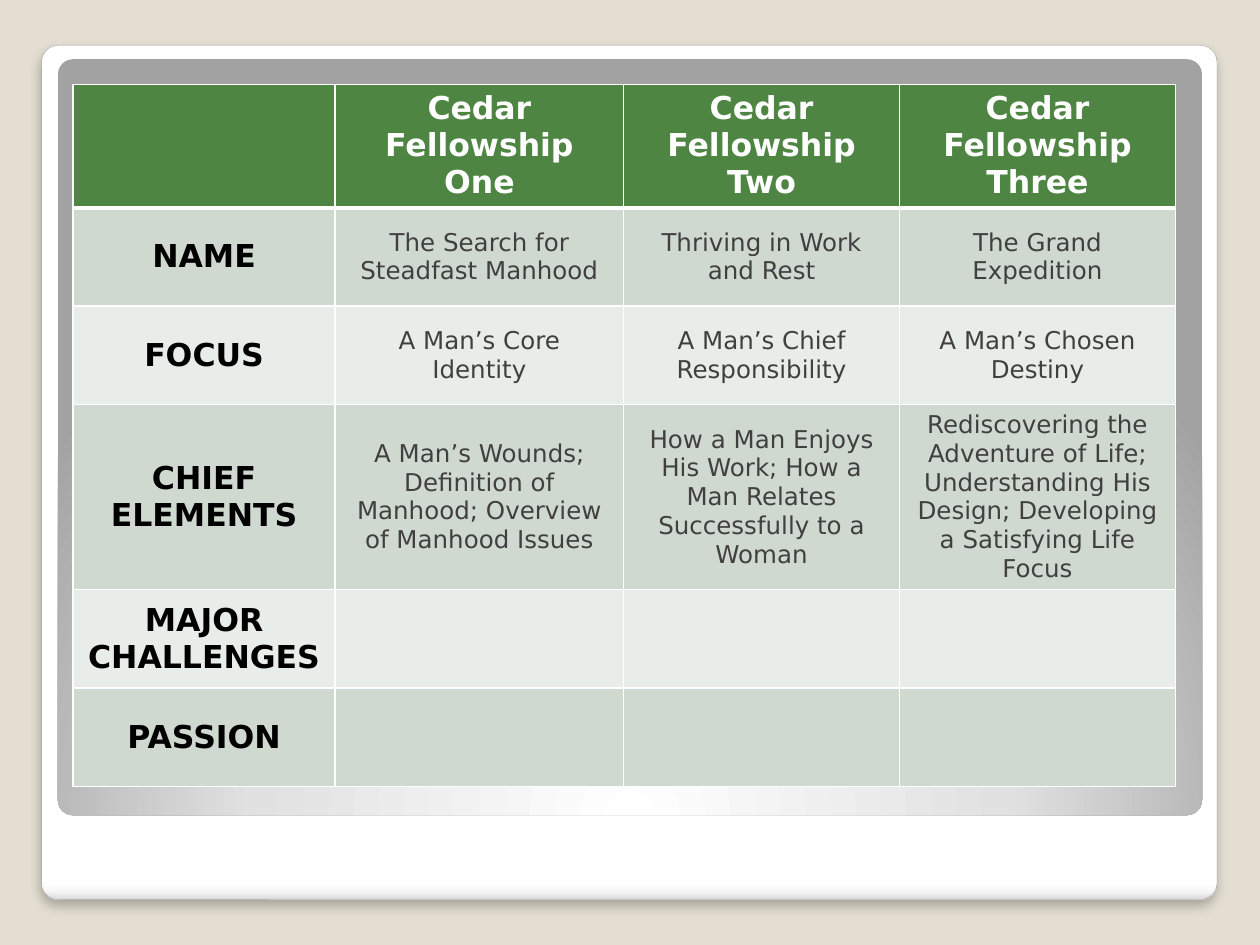
"""Build a slide with a framed table comparing three study courses."""
from lxml.etree import SubElement as Sub
from pptx import Presentation
from pptx.dml.color import RGBColor as RGB
from pptx.enum.shapes import MSO_SHAPE as Shape
from pptx.enum.text import MSO_ANCHOR as Anchor, PP_ALIGN as Align
from pptx.oxml import parse_xml
from pptx.oxml.ns import nsdecls, qn
from pptx.util import Inches, Pt

FONT = "DejaVu Sans"
HUES = {
    "back": "E3DED1", "edge": "A4A4A4", "head": "4E8542", "odd": "D0D9CF",
    "even": "E9EDE9", "white": "FFFFFF", "label": "000000", "body": "404040",
}
PANEL = [(0, "FFFFFF"), (98, "FFFFFF"), (99, "F7F7F7"), (100, "DADADA")]
FRAME = [(0, "FFFFFF"), (55, "E1E1E1"), (100, "A2A2A2")]
DOWN = '<a:lin ang="5400000" scaled="0"/>'
GLOW = ('<a:path path="circle"><a:fillToRect l="50000" t="175000" '
        'r="50000" b="-75000"/></a:path>')
COLS = [2.08, 2.29, 2.19, 2.19]
ROWS = [0.98, 0.78, 0.78, 1.47, 0.78, 0.78]
CELLS = [
    ["", "Cedar Fellowship\nOne", "Cedar Fellowship\nTwo",
     "Cedar Fellowship\nThree"],
    ["NAME", "The Search for Steadfast Manhood", "Thriving in Work and Rest",
     "The Grand Expedition"],
    ["FOCUS", "A Man’s Core Identity", "A Man’s Chief Responsibility",
     "A Man’s Chosen Destiny"],
    ["CHIEF ELEMENTS",
     "A Man’s Wounds; Definition of Manhood; Overview of Manhood Issues",
     "How a Man Enjoys His Work; How a Man Relates Successfully to a Woman",
     "Rediscovering the Adventure of Life; Understanding His Design; "
     "Developing a Satisfying Life Focus"],
    ["MAJOR CHALLENGES", "", "", ""],
    ["PASSION", "", "", ""],
]


def hue(name):
    return RGB.from_string(HUES[name])


def add_card(slide, box, stops, path):
    card = slide.shapes.add_shape(Shape.ROUNDED_RECTANGLE, *map(Inches, box))
    card.adjustments[0] = 0.02
    card.shadow.inherit = False
    card.line.fill.background()
    marks = "".join(
        f'<a:gs pos="{pos * 1000}"><a:srgbClr val="{tone}"/></a:gs>'
        for pos, tone in stops)
    grad = parse_xml(f'<a:gradFill {nsdecls("a")} rotWithShape="1">'
                     f'<a:gsLst>{marks}</a:gsLst>{path}</a:gradFill>')
    card._element.spPr.find(qn("a:prstGeom")).addnext(grad)
    return card


def add_shade(card):
    effects = card._element.spPr.find(qn("a:effectLst"))
    shade = Sub(effects, qn("a:outerShdw"), blurRad=str(Pt(6)),
                dist=str(Pt(4)), dir="5400000", algn="t", rotWithShape="0")
    tone = Sub(shade, qn("a:srgbClr"), val="000000")
    Sub(tone, qn("a:alpha"), val="25000")


def set_edges(cell, row):
    widths = {"L": 1, "R": 1, "T": 3 if row == 1 else 1,
              "B": 3 if row == 0 else 1}
    props = cell._tc.get_or_add_tcPr()
    for spot, (side, width) in enumerate(widths.items()):
        props.insert(spot, parse_xml(
            f'<a:ln{side} {nsdecls("a")} w="{Pt(width)}"><a:solidFill>'
            f'<a:srgbClr val="{HUES["white"]}"/></a:solidFill></a:ln{side}>'))


def fill_cell(cell, text, row, col):
    head, label = row == 0, col == 0
    cell.text = text
    cell.vertical_anchor = Anchor.TOP if head else Anchor.MIDDLE
    cell.fill.solid()
    cell.fill.fore_color.rgb = hue(
        "head" if head else "odd" if row % 2 else "even")
    for para in cell.text_frame.paragraphs:
        para.alignment = Align.CENTER
        font = para.font
        font.name = FONT
        font.size = Pt(18 if head or label else 14)
        font.bold = head or label
        font.color.rgb = hue("white" if head else "label" if label else "body")
    set_edges(cell, row)


def add_grid(slide, left, top):
    size = map(Inches, (left, top, sum(COLS), sum(ROWS)))
    grid = slide.shapes.add_table(len(ROWS), len(COLS), *size).table
    for col, width in zip(grid.columns, COLS):
        col.width = Inches(width)
    for row, height in zip(grid.rows, ROWS):
        row.height = Inches(height)
    for row, texts in enumerate(CELLS):
        for col, text in enumerate(texts):
            fill_cell(grid.cell(row, col), text, row, col)


def main():
    deck = Presentation()
    deck.slide_width, deck.slide_height = Inches(10), Inches(7.5)
    slide = deck.slides.add_slide(deck.slide_layouts[6])
    slide.background.fill.solid()
    slide.background.fill.fore_color.rgb = hue("back")
    panel = add_card(slide, (0.33, 0.36, 9.33, 6.78), PANEL, DOWN)
    panel.line.color.rgb = hue("edge")
    panel.line.width = Pt(0.16)
    add_shade(panel)
    add_card(slide, (0.46, 0.47, 9.08, 6), FRAME, GLOW)
    add_grid(slide, 0.58, 0.67)
    deck.save("out.pptx")


if __name__ == "__main__":
    main()
